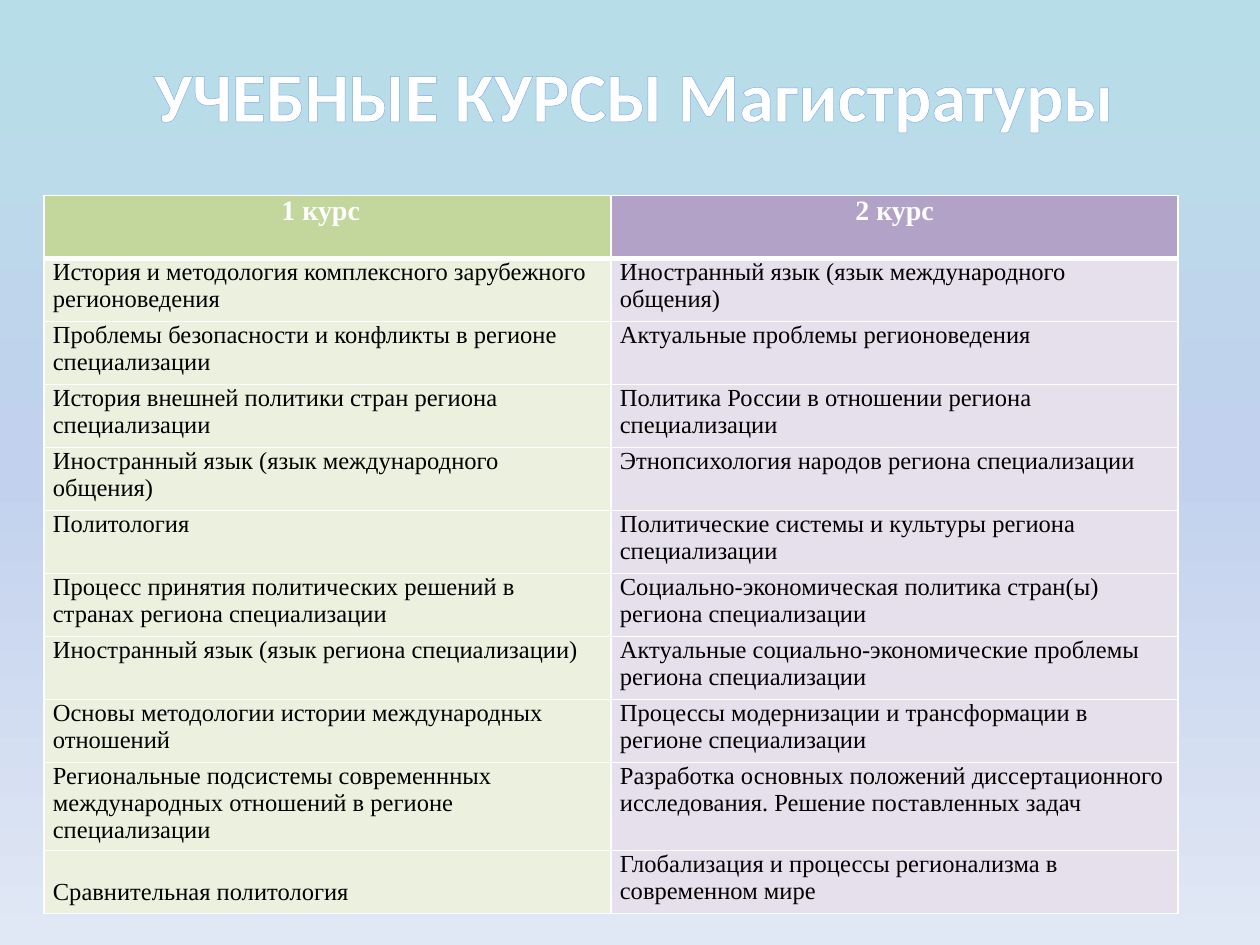
"""Build the slide that lists the master's programme courses by year."""
from copy import deepcopy
from dataclasses import dataclass

from lxml import etree
from pptx import Presentation
from pptx.dml.color import RGBColor
from pptx.enum.text import MSO_ANCHOR, MSO_AUTO_SIZE, PP_ALIGN
from pptx.oxml.ns import qn
from pptx.util import Inches, Pt

CENTER, LEFT = PP_ALIGN.CENTER, PP_ALIGN.LEFT
TOP, BOTTOM = MSO_ANCHOR.TOP, MSO_ANCHOR.BOTTOM
TITLE_ONLY = 5
WHITE, BLACK = "FFFFFF", "000000"
BACKGROUND = [(0, "B7DEE8"), (0.5, "C2D1ED"), (1, "E1E8F5")]
ROW_HEIGHT, COLUMN_WIDTH = 0.5, 4.5


@dataclass
class Year:
    heading: str
    head_fill: str
    body_fill: str
    courses: list[str]


@dataclass
class CellStyle:
    fill: str
    color: str
    size: int
    bold: bool
    align: PP_ALIGN
    top_line: int = 1
    bottom_line: int = 1


YEARS = [
    Year("1 курс", "C3D69B", "EBF1DE", [
        "История и методология комплексного зарубежного регионоведения",
        "Проблемы безопасности и конфликты в регионе специализации",
        "История внешней политики стран региона специализации",
        "Иностранный язык (язык международного общения)",
        "Политология",
        "Процесс принятия политических решений в странах региона специализации",
        "Иностранный язык (язык региона специализации)",
        "Основы методологии истории международных отношений",
        "Региональные подсистемы современнных международных отношений "
        "в регионе специализации",
        "Сравнительная политология",
    ]),
    Year("2 курс", "B3A2C7", "E6E0EC", [
        "Иностранный язык (язык международного общения)",
        "Актуальные проблемы регионоведения",
        "Политика России в отношении региона специализации",
        "Этнопсихология народов региона специализации",
        "Политические системы и культуры региона специализации",
        "Социально-экономическая политика стран(ы) региона специализации",
        "Актуальные социально-экономические проблемы региона специализации",
        "Процессы модернизации и трансформации в регионе специализации",
        "Разработка основных положений диссертационного исследования. "
        "Решение поставленных задач",
        "Глобализация и процессы регионализма в современном мире",
    ]),
]


def rgb(value: str) -> RGBColor:
    """Turn a hex string into a colour."""
    return RGBColor.from_string(value)


def make_line(tag: str, color: str, width: float):
    """Make a solid line element for a cell border or text outline."""
    line = etree.Element(qn(tag), w=str(int(Pt(width))))
    solid = etree.SubElement(line, qn("a:solidFill"))
    etree.SubElement(solid, qn("a:srgbClr"), val=color)
    return line


def paint_background(page) -> None:
    """Fill the page with a top-to-bottom gradient."""
    fill = page.background.fill
    fill.gradient()
    fill.gradient_angle = 270
    stop_list = page.element.xpath(".//a:gsLst")[0]
    stop_list.append(deepcopy(stop_list[-1]))
    for stop, (position, color) in zip(fill.gradient_stops, BACKGROUND):
        stop.position = position
        stop.color.rgb = rgb(color)


def write_title(page, text: str) -> None:
    """Place the outlined title."""
    box = page.shapes.title
    box.left, box.top = Inches(1.08), Inches(0.36)
    box.width, box.height = Inches(7.9), Inches(0.77)
    frame = box.text_frame
    frame.text = text
    frame.word_wrap = False
    frame.auto_size = MSO_AUTO_SIZE.SHAPE_TO_FIT_TEXT
    para = frame.paragraphs[0]
    para.alignment = CENTER
    font = para.runs[0].font
    font.name, font.size, font.bold = "Calibri", Pt(40), True
    font.color.rgb = rgb(WHITE)
    para.runs[0]._r.get_or_add_rPr().insert(0, make_line("a:ln", "7EA6EA", 2.48))


def write_cell(cell, text: str, style: CellStyle) -> None:
    """Write and format one table cell."""
    cell.text = text
    cell.margin_left = cell.margin_right = Inches(0.07)
    cell.margin_top = cell.margin_bottom = 0
    cell.vertical_anchor = TOP
    cell.fill.solid()
    cell.fill.fore_color.rgb = rgb(style.fill)
    para = cell.text_frame.paragraphs[0]
    para.alignment = style.align
    font = para.font
    font.name, font.size, font.bold = "Times New Roman", Pt(style.size), style.bold
    font.color.rgb = rgb(style.color)
    widths = {"L": 1, "R": 1, "T": style.top_line, "B": style.bottom_line}
    properties = cell._tc.get_or_add_tcPr()
    for index, (side, width) in enumerate(widths.items()):
        properties.insert(index, make_line(f"a:ln{side}", WHITE, width))


def add_course_table(page, years: list[Year]) -> None:
    """Add the table with one column per year."""
    row_count = len(years[0].courses) + 1
    table = page.shapes.add_table(
        row_count, len(years), Inches(0.35), Inches(1.55),
        Inches(COLUMN_WIDTH * len(years)), Inches(ROW_HEIGHT * row_count)).table
    for column, year in enumerate(years):
        head = CellStyle(year.head_fill, WHITE, 16, True, CENTER, bottom_line=3)
        write_cell(table.cell(0, column), year.heading, head)
        for row, course in enumerate(year.courses, start=1):
            body = CellStyle(year.body_fill, BLACK, 14, False, LEFT,
                             top_line=3 if row == 1 else 1)
            write_cell(table.cell(row, column), course, body)
    table.cell(0, 0).margin_right = Inches(0.18)
    table.cell(row_count - 1, 0).vertical_anchor = BOTTOM
    table.cell(row_count - 1, 0).margin_bottom = Inches(0.06)


def main() -> None:
    """Build and save the deck."""
    deck = Presentation()
    deck.slide_width, deck.slide_height = Inches(10), Inches(7.5)
    page = deck.slides.add_slide(deck.slide_layouts[TITLE_ONLY])
    paint_background(page)
    add_course_table(page, YEARS)
    write_title(page, "УЧЕБНЫЕ КУРСЫ Магистратуры")
    deck.save("out.pptx")


if __name__ == "__main__":
    main()
